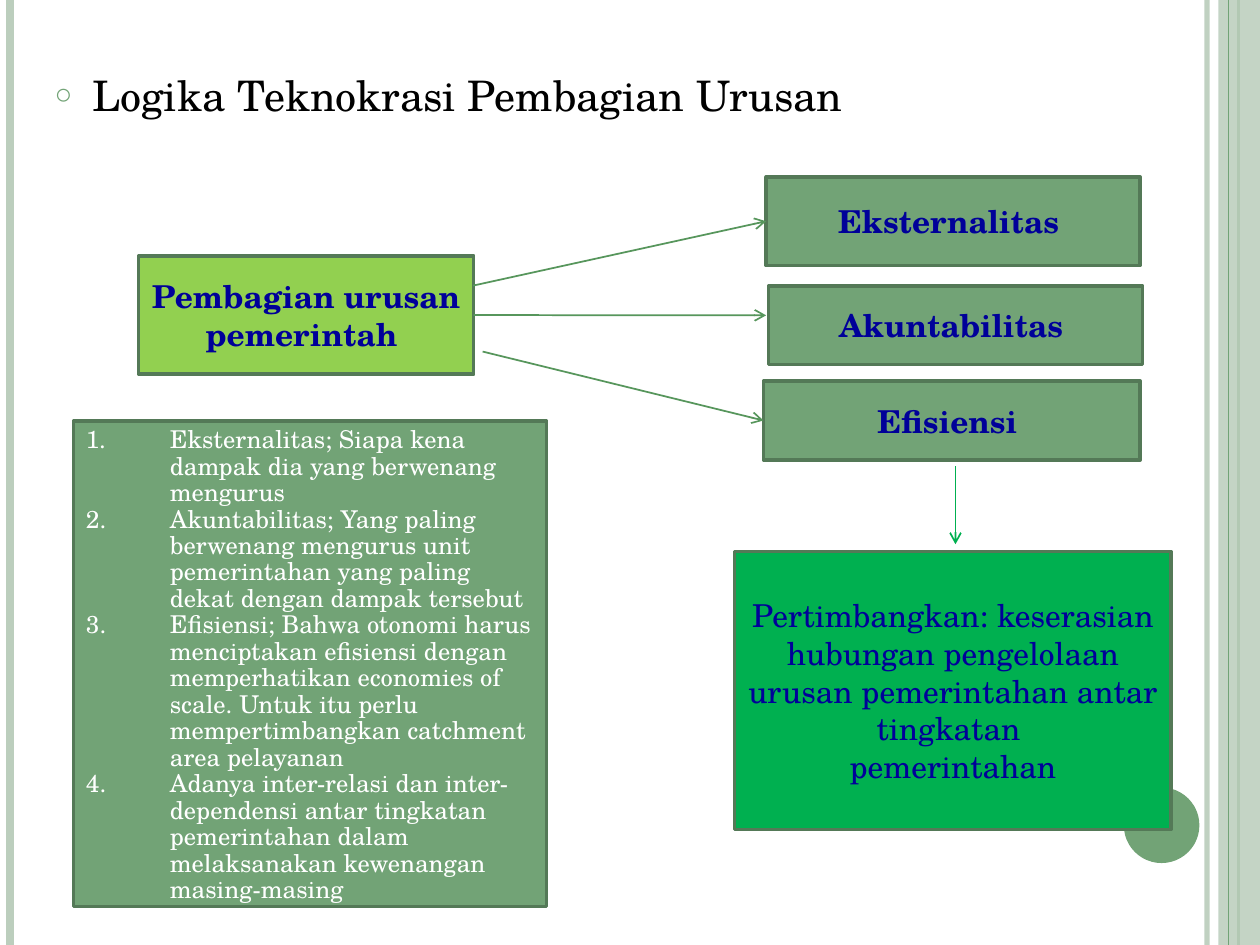
from dataclasses import dataclass
from typing import Optional

from lxml import etree
from pptx import Presentation
from pptx.dml.color import RGBColor
from pptx.enum import shapes, text
from pptx.oxml import ns
from pptx.util import Pt


@dataclass(frozen=True)
class Theme:
    font: str = "TeX Gyre Schola"
    pale: str = "BCCEBD"
    sage: str = "72A376"
    border: str = "547957"
    arrow: str = "57965C"
    lime: str = "92D050"
    green: str = "00B050"
    navy: str = "000099"
    white: str = "FFFFFF"
    black: str = "000000"
    heading_size: float = 24
    box_size: float = 18
    list_size: float = 14


THEME = Theme()


@dataclass(frozen=True)
class Box:
    left: float
    top: float
    width: float
    height: float
    fill: str
    lines: tuple[str, ...]
    color: str = THEME.navy
    size: float = THEME.box_size
    bold: bool = True


@dataclass(frozen=True)
class Line:
    begin: tuple[float, float]
    end: tuple[float, float]
    color: str = THEME.arrow
    width: float = 1
    arrow: bool = True
    begin_box: Optional[str] = None
    end_box: Optional[str] = None
    opacity: int = 100


def rail(x: float, color: str, width: float, opacity: int = 100) -> Line:
    return Line((x, 0), (x, 540), color, width, arrow=False, opacity=opacity)


RAILS_BELOW = (rail(689.8, THEME.pale, 3, 93), rail(5.8, THEME.pale, 4.5), rail(707.8, THEME.sage, 1.5))
RAIL_ABOVE = rail(702, THEME.sage, 0.75)

BOXES = {
    "division": Box(79.2, 146.2, 191.5, 67.7, THEME.lime, ("Pembagian urusan pemerintah ",)),
    "externality": Box(437.8, 101.2, 213.8, 50.5, THEME.sage, ("Eksternalitas ",)),
    "accountability": Box(439.2, 163.4, 213.8, 44.9, THEME.sage, ("Akuntabilitas ",)),
    "efficiency": Box(436.3, 217.8, 215.3, 45, THEME.sage, ("Efisiensi ",)),
    "consideration": Box(
        419.8, 315.2, 249.5, 158.8, THEME.green,
        ("Pertimbangkan: keserasian hubungan pengelolaan urusan pemerintahan antar tingkatan ",
         "pemerintahan"), bold=False),
}

CRITERIA = Box(
    42, 240.7, 270.4, 277.4, THEME.sage,
    ("Eksternalitas; Siapa kena dampak dia yang berwenang mengurus",
     "Akuntabilitas; Yang paling berwenang mengurus unit pemerintahan yang paling dekat "
     "dengan dampak tersebut",
     "Efisiensi; Bahwa otonomi harus menciptakan efisiensi dengan memperhatikan economies of "
     "scale. Untuk itu perlu mempertimbangkan catchment area pelayanan",
     "Adanya inter-relasi dan inter-dependensi antar tingkatan pemerintahan dalam "
     "melaksanakan kewenangan masing-masing"),
    THEME.white, THEME.list_size, bold=False)

ARROWS = (
    Line((270.4, 163.2), (436.3, 126.5), end_box="externality"),
    Line((270.7, 180), (437.8, 180.2), begin_box="division"),
    Line((275.8, 200.9), (436.3, 240.3), end_box="efficiency"),
    Line((546, 266.4), (546, 311), THEME.green),
)


def rgb(color: str) -> RGBColor:
    return RGBColor.from_string(color)


def add_child(parent, tag: str, **attributes: str):
    return etree.SubElement(parent, ns.qn(tag), attributes)


def set_opacity(properties, percent: int) -> None:
    """Make the first solid colour inside the properties partly transparent."""
    color = next(properties.iter(ns.qn("a:srgbClr")))
    add_child(color, "a:alpha", val=str(percent * 1000))


def set_indent(paragraph, indent: float):
    """Give the paragraph a hanging indent and return its properties."""
    properties = paragraph._p.get_or_add_pPr()
    properties.set("marL", str(Pt(indent)))
    properties.set("indent", str(-Pt(indent)))
    return properties


def format_runs(paragraph, color: str, size: float, bold: bool = False) -> None:
    for run in paragraph.runs:
        run.font.name = THEME.font
        run.font.size = Pt(size)
        run.font.bold = bold
        run.font.color.rgb = rgb(color)


def draw_line(slide, line: Line, drawn: dict):
    points = [Pt(value) for value in (*line.begin, *line.end)]
    connector = slide.shapes.add_connector(shapes.MSO_CONNECTOR.STRAIGHT, *points)
    connector.line.color.rgb = rgb(line.color)
    connector.line.width = Pt(line.width)
    if line.begin_box:
        connector.begin_connect(drawn[line.begin_box], 3)
    if line.end_box:
        connector.end_connect(drawn[line.end_box], 1)
    properties = connector._element.spPr
    if line.opacity < 100:
        set_opacity(properties, line.opacity)
    if line.arrow:
        add_child(connector.line._get_or_add_ln(), "a:tailEnd", type="arrow")
    add_child(properties, "a:effectLst")
    return connector


def draw_plain(slide, kind, bounds: tuple[float, ...], color: str):
    shape = slide.shapes.add_shape(kind, *(Pt(value) for value in bounds))
    shape.shadow.inherit = False
    shape.fill.solid()
    shape.fill.fore_color.rgb = rgb(color)
    shape.line.fill.background()
    return shape


def draw_box(slide, box: Box):
    bounds = (box.left, box.top, box.width, box.height)
    shape = draw_plain(slide, shapes.MSO_SHAPE.RECTANGLE, bounds, box.fill)
    shape.line.color.rgb = rgb(THEME.border)
    shape.line.width = Pt(2)
    frame = shape.text_frame
    frame.word_wrap = True
    frame.vertical_anchor = text.MSO_ANCHOR.MIDDLE
    frame.text = "\n".join(box.lines)
    for paragraph in frame.paragraphs:
        paragraph.alignment = text.PP_ALIGN.CENTER
        format_runs(paragraph, box.color, box.size, box.bold)
    return shape


def draw_criteria(slide) -> None:
    frame = draw_box(slide, CRITERIA).text_frame
    frame.vertical_anchor = text.MSO_ANCHOR.TOP
    for paragraph in frame.paragraphs:
        paragraph.alignment = text.PP_ALIGN.LEFT
        paragraph.line_spacing = 0.9
        add_child(set_indent(paragraph, 48), "a:buAutoNum", type="arabicPeriod")


def write_heading(body) -> None:
    body.left, body.top, body.width, body.height = Pt(24), Pt(36), Pt(684), Pt(443)
    frame = body.text_frame
    frame.auto_size = text.MSO_AUTO_SIZE.NONE
    frame.text = "Logika Teknokrasi Pembagian Urusan"
    paragraph = frame.paragraphs[0]
    paragraph.space_before = Pt(0)
    properties = set_indent(paragraph, 21.6)
    add_child(add_child(properties, "a:buClr"), "a:srgbClr", val=THEME.sage)
    add_child(properties, "a:buSzPct", val="70000")
    add_child(properties, "a:buChar", char="○")
    format_runs(paragraph, THEME.black, THEME.heading_size)


def draw_background(slide) -> None:
    for line in RAILS_BELOW:
        draw_line(slide, line, {})
    band = draw_plain(slide, shapes.MSO_SHAPE.RECTANGLE, (696.2, 0, 23.8, 540), THEME.pale)
    set_opacity(band._element.spPr, 87)
    draw_line(slide, RAIL_ABOVE, {})
    draw_plain(slide, shapes.MSO_SHAPE.OVAL, (642.2, 450, 43.2, 43.2), THEME.sage)


def main() -> None:
    presentation = Presentation()
    presentation.slide_width, presentation.slide_height = Pt(720), Pt(540)
    slide = presentation.slides.add_slide(presentation.slide_layouts[1])
    title = slide.shapes.title._element
    title.getparent().remove(title)
    write_heading(slide.placeholders[1])
    draw_background(slide)
    drawn = {name: draw_box(slide, box) for name, box in BOXES.items()}
    for arrow in ARROWS:
        draw_line(slide, arrow, drawn)
    draw_criteria(slide)
    presentation.save("out.pptx")


if __name__ == "__main__":
    main()
